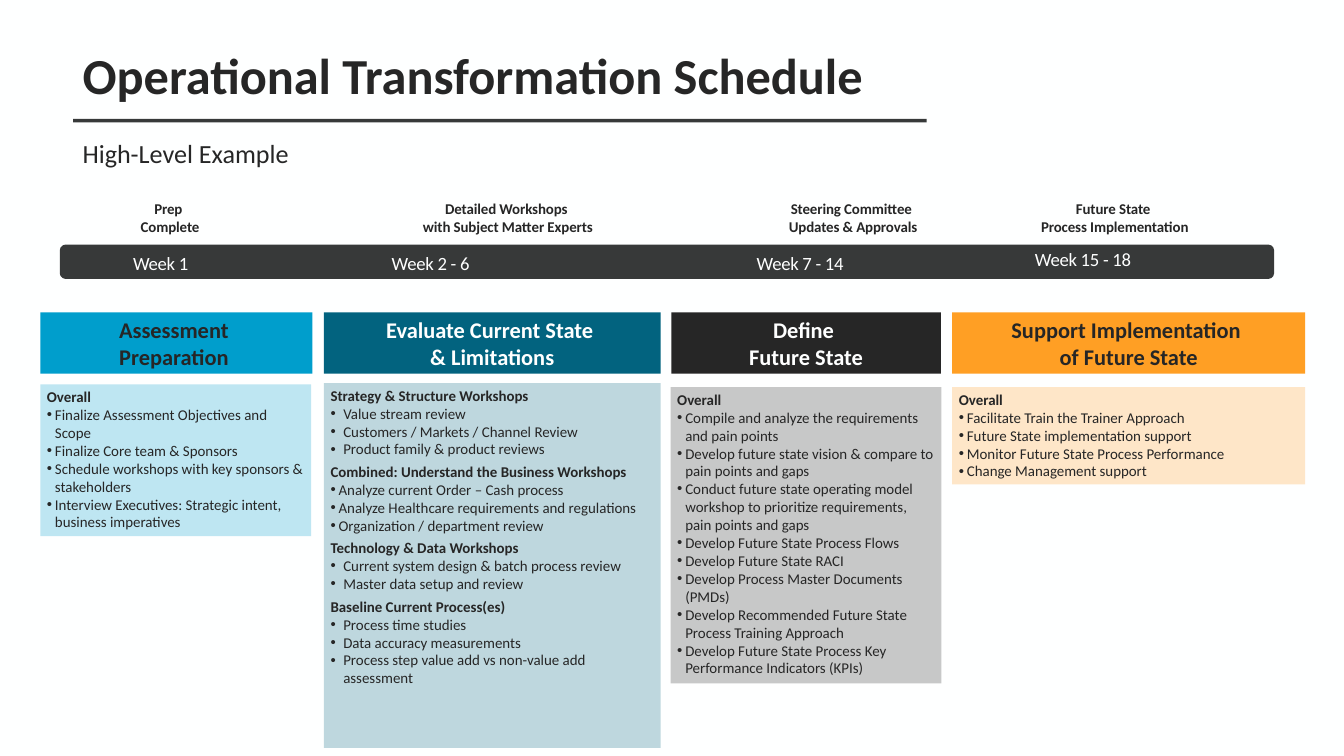
from copy import deepcopy

from lxml.etree import SubElement
from pptx import Presentation
from pptx.dml.color import RGBColor
from pptx.enum.shapes import MSO_SHAPE as Shape
from pptx.enum.text import MSO_ANCHOR as Anchor, MSO_AUTO_SIZE as AutoSize, PP_ALIGN as Align
from pptx.oxml.ns import qn
from pptx.util import Inches, Pt

WHITE = RGBColor(0xFE, 0xFF, 0xFF)
INK = RGBColor(0x26, 0x26, 0x26)
CHARCOAL = RGBColor(0x37, 0x39, 0x39)
BLUE = RGBColor(0x00, 0x9E, 0xCC)
TEAL = RGBColor(0x02, 0x63, 0x7F)
ORANGE = RGBColor(0xFF, 0x9F, 0x24)

FONT = "Calibri"
NARROW, WIDE = 0.12, 0.19  # bullet indents in inches
HEADER_TOP, HEADER_HEIGHT = 4.65, 0.91
WEEK_WIDTH, WEEK_HEIGHT = 1.7, 0.3

# Left, top, text
WEEKS = [
    (1.98, 3.76, "Week 1"),
    (5.83, 3.76, "Week 2 - 6"),
    (11.26, 3.76, "Week 7 - 14"),
    (15.4, 3.71, "Week 15 - 18"),
]

# Left, width, text
MILESTONES = [
    (1.72, 1.62, "Prep \vComplete"),
    (5.11, 4.9, "Detailed Workshops \vwith Subject Matter Experts"),
    (10.43, 4.53, "Steering Committee \vUpdates & Approvals"),
    (14.61, 3.96, "Future State \vProcess Implementation"),
]

# Header, its colours, header left and width, body place, sections (heading, indent, bullets)
PHASES = [
    ("Assessment \vPreparation ", BLUE, INK, (0.6, 4.05), (0.6, 5.72, 4.03, 2.26), [
        ("Overall", NARROW, [
            "Finalize Assessment Objectives and Scope",
            "Finalize Core team & Sponsors",
            "Schedule workshops with key sponsors & stakeholders",
            "Interview Executives: Strategic intent, business imperatives",
        ]),
    ]),
    ("Evaluate Current State \v& Limitations", TEAL, WHITE, (4.82, 5.01), (4.82, 5.7, 5.01, 5.43), [
        ("Strategy & Structure Workshops", WIDE, [
            "Value stream review",
            "Customers / Markets / Channel Review",
            "Product family & product reviews",
        ]),
        ("Combined: Understand the Business Workshops", NARROW, [
            "Analyze current Order – Cash process",
            "Analyze Healthcare requirements and regulations",
            "Organization / department review",
        ]),
        ("Technology & Data Workshops", WIDE, [
            "Current system design & batch process review",
            "Master data setup and review",
        ]),
        ("Baseline Current Process(es)", WIDE, [
            "Process time studies",
            "Data accuracy measurements",
            "Process step value add vs non-value add assessment",
        ]),
    ]),
    ("Define \vFuture State", INK, WHITE, (9.99, 4.01), (9.98, 5.76, 4.03, 4.41), [
        ("Overall", NARROW, [
            "Compile and analyze the requirements and pain points",
            "Develop future state vision & compare to pain points and gaps",
            "Conduct future state operating model workshop to prioritize requirements, "
            "pain points and gaps",
            "Develop Future State Process Flows",
            "Develop Future State RACI",
            "Develop Process Master Documents (PMDs)",
            "Develop Recommended Future State Process Training Approach",
            "Develop Future State Process Key Performance Indicators (KPIs)",
        ]),
    ]),
    ("Support Implementation \vof Future State", ORANGE, INK, (14.17, 5.25), (14.17, 5.76, 5.25, 1.45), [
        ("Overall", NARROW, [
            "Facilitate Train the Trainer Approach",
            "Future State implementation support",
            "Monitor Future State Process Performance",
            "Change Management support",
        ]),
    ]),
]


def write(para, text, size, color, bold=False, align=Align.LEFT, tracking=0):
    """Fill a paragraph; line breaks take the format of the runs. Tracking is in points."""
    para.text = text
    para.alignment = align
    for span in para.runs:
        font = span.font
        font.name, font.size, font.bold = FONT, Pt(size), bold
        font.color.rgb = color
        if tracking:
            span._r.get_or_add_rPr().set("spc", str(round(tracking * 100)))
    for line_break in para._p.findall(qn("a:br")):
        line_break.insert(0, deepcopy(para.runs[0]._r.rPr))


def add_block(slide, place, color, kind=Shape.RECTANGLE):
    block = slide.shapes.add_shape(kind, *map(Inches, place))
    block.shadow.inherit = False
    block.fill.solid()
    block.fill.fore_color.rgb = color
    block.line.fill.background()
    block.text_frame.word_wrap = True
    return block


def add_label(slide, place, text, size, color, **style):
    """Add a text box without margins, centred vertically."""
    frame = slide.shapes.add_textbox(*map(Inches, place)).text_frame
    frame.margin_left = frame.margin_top = frame.margin_right = frame.margin_bottom = 0
    frame.vertical_anchor = Anchor.MIDDLE
    frame.word_wrap = True
    write(frame.paragraphs[0], text, size, color, **style)


def add_bullet(para, indent):
    properties = para._p.get_or_add_pPr()
    properties.set("marL", str(Inches(indent)))
    properties.set("indent", str(-Inches(indent)))
    SubElement(properties, qn("a:buFont"), typeface="Arial")
    SubElement(properties, qn("a:buChar"), char="•")


def add_header(slide, left, width, text, fill, color):
    block = add_block(slide, (left, HEADER_TOP, width, HEADER_HEIGHT), fill)
    block.text_frame.vertical_anchor = Anchor.MIDDLE
    write(block.text_frame.paragraphs[0], text, 24, color, bold=True, align=Align.CENTER)


def add_body(slide, place, color, sections):
    """Add a 25% tinted block with headed bullet lists."""
    block = add_block(slide, place, color)
    color_node = block.fill._xPr.find(qn("a:solidFill"))[0]
    SubElement(color_node, qn("a:alpha"), val="25000")
    frame = block.text_frame
    frame.vertical_anchor = Anchor.TOP
    for number, (heading, indent, bullets) in enumerate(sections):
        para = frame.add_paragraph() if number else frame.paragraphs[0]
        write(para, heading, 16, INK, bold=True)
        if number:
            para.space_before = Pt(5)
        for bullet in bullets:
            para = frame.add_paragraph()
            add_bullet(para, indent)
            write(para, bullet, 16, INK)


def add_titles(slide):
    title = slide.shapes.title
    title.left, title.top, title.width, title.height = map(Inches, (1.13, 0.61, 17.29, 0.99))
    frame = title.text_frame
    frame.auto_size = AutoSize.NONE
    frame.vertical_anchor = Anchor.TOP
    write(frame.paragraphs[0], "Operational Transformation Schedule", 54, INK, bold=True)
    frame.paragraphs[0].space_before = Pt(0)

    subtitle = slide.shapes.add_textbox(*map(Inches, (1.13, 1.99, 16.53, 0.57)))
    subtitle.text_frame.word_wrap = True
    write(subtitle.text_frame.paragraphs[0], "High-Level Example", 28, INK)


def add_timeline(slide):
    add_block(slide, (0.89, 3.64, 18.07, 0.51), CHARCOAL, Shape.ROUNDED_RECTANGLE)
    for left, top, text in WEEKS:
        add_label(slide, (left, top, WEEK_WIDTH, WEEK_HEIGHT), text, 20, WHITE, tracking=-0.3)
    for left, width, text in MILESTONES:
        add_label(slide, (left, 2.97, width, 0.54), text, 16, INK,
                  bold=True, align=Align.CENTER, tracking=-0.1)


def main():
    deck = Presentation()
    deck.slide_width, deck.slide_height = Inches(20), Inches(11.25)
    slide = deck.slides.add_slide(deck.slide_layouts[5])
    slide.background.fill.solid()
    slide.background.fill.fore_color.rgb = WHITE

    add_block(slide, (1.09, 1.77, 12.7, 0.05), CHARCOAL)
    add_titles(slide)
    add_timeline(slide)
    for header, fill, color, (left, width), body_place, sections in PHASES:
        add_body(slide, body_place, fill, sections)
        add_header(slide, left, width, header, fill, color)
    deck.save("out.pptx")


if __name__ == "__main__":
    main()
